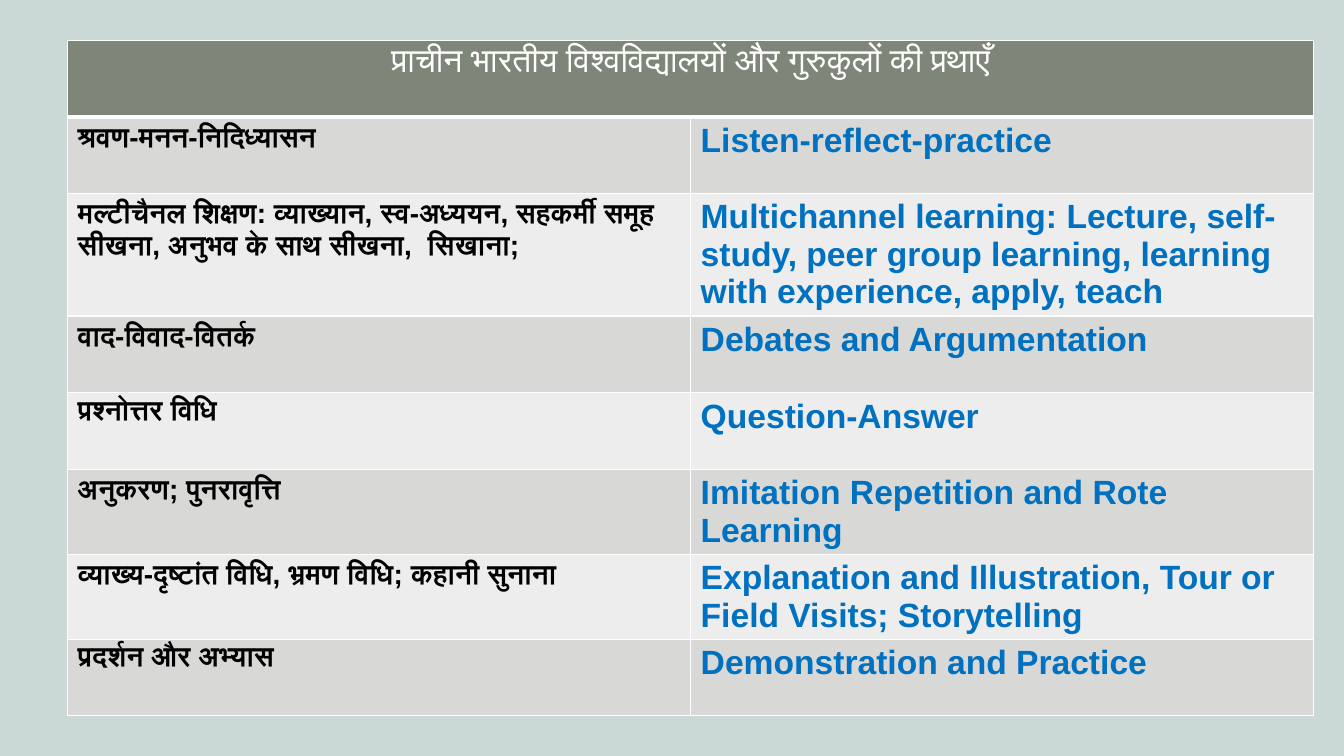
from dataclasses import dataclass

from lxml import etree
from pptx import Presentation
from pptx.dml.color import RGBColor
from pptx.enum.text import PP_ALIGN
from pptx.oxml.ns import qn
from pptx.util import Inches, Pt

CENTER, LEFT = PP_ALIGN.CENTER, PP_ALIGN.LEFT

# Content
HEADING = "प्राचीन भारतीय विश्वविद्यालयों और गुरुकुलों की प्रथाएँ"
PRACTICES = [
    ("श्रवण-मनन-निदिध्यासन", "Listen-reflect-practice"),
    ("मल्टीचैनल शिक्षण: व्याख्यान, स्व-अध्ययन, सहकर्मी समूह सीखना, अनुभव के साथ सीखना,  सिखाना;",
     "Multichannel learning: Lecture, self-study, peer group learning, "
     "learning with experience, apply, teach"),
    ("वाद-विवाद-वितर्क", "Debates and Argumentation"),
    ("प्रश्नोत्तर विधि", "Question-Answer"),
    ("अनुकरण; पुनरावृत्ति", "Imitation Repetition and Rote Learning"),
    ("व्याख्य-दृष्टांत विधि, भ्रमण विधि; कहानी सुनाना",
     "Explanation and Illustration, Tour or Field Visits; Storytelling"),
    ("प्रदर्शन और अभ्यास", "Demonstration and Practice"),
]


@dataclass(frozen=True)
class Theme:
    font: str = "Arial"
    background: str = "CAD8D6"
    header_fill: str = "7E8679"
    bands: tuple = ("D8D9D7", "ECEDEC")
    border: str = "FFFFFF"
    header_text: str = "FFFFFF"
    hindi_text: str = "000000"
    english_text: str = "0070C0"
    large: int = 24
    small: int = 20
    thin: int = 1
    thick: int = 3


THEME = Theme()

# Layout in inches
TABLE_LEFT, TABLE_TOP = 0.67, 0.4
COLUMN_WIDTH, ROW_HEIGHT = 6.18, 0.76


def set_borders(cell, bottom_width):
    properties = cell._tc.get_or_add_tcPr()
    for side in ("L", "R", "T", "B"):
        width = bottom_width if side == "B" else THEME.thin
        line = etree.SubElement(properties, qn(f"a:ln{side}"), w=str(Pt(width)))
        fill = etree.SubElement(line, qn("a:solidFill"))
        etree.SubElement(fill, qn("a:srgbClr"), val=THEME.border)


def style_cell(cell, fill, bottom_width=THEME.thin):
    set_borders(cell, bottom_width)
    cell.fill.solid()
    cell.fill.fore_color.rgb = RGBColor.from_string(fill)


def write_cell(cell, text, size, color, bold=True, align=LEFT):
    cell.text_frame.text = text
    para = cell.text_frame.paragraphs[0]
    para.alignment = align
    font = para.runs[0].font
    font.name, font.size, font.bold = THEME.font, Pt(size), bold
    font.color.rgb = RGBColor.from_string(color)


def main():
    deck = Presentation()
    deck.slide_width, deck.slide_height = Inches(13.33), Inches(7.5)
    page = deck.slides.add_slide(deck.slide_layouts[6])
    page.background.fill.solid()
    page.background.fill.fore_color.rgb = RGBColor.from_string(THEME.background)

    # Table grid
    row_count = len(PRACTICES) + 1
    table = page.shapes.add_table(
        row_count, 2, Inches(TABLE_LEFT), Inches(TABLE_TOP),
        Inches(2 * COLUMN_WIDTH), Inches(row_count * ROW_HEIGHT)).table
    for column in table.columns:
        column.width = Inches(COLUMN_WIDTH)
    for row in table.rows:
        row.height = Inches(ROW_HEIGHT)

    # Heading across both columns
    heading = table.cell(0, 0)
    heading.merge(table.cell(0, 1))
    for cell in table.rows[0].cells:
        style_cell(cell, THEME.header_fill, THEME.thick)
    write_cell(heading, HEADING, THEME.large, THEME.header_text, False, CENTER)

    # Practices in Hindi and English, on alternating bands
    for index, (hindi, english) in enumerate(PRACTICES):
        hindi_cell, english_cell = table.rows[index + 1].cells
        for cell in (hindi_cell, english_cell):
            style_cell(cell, THEME.bands[index % 2])
        write_cell(hindi_cell, hindi, THEME.small, THEME.hindi_text)
        write_cell(english_cell, english, THEME.large, THEME.english_text)

    deck.save("out.pptx")


if __name__ == "__main__":
    main()
